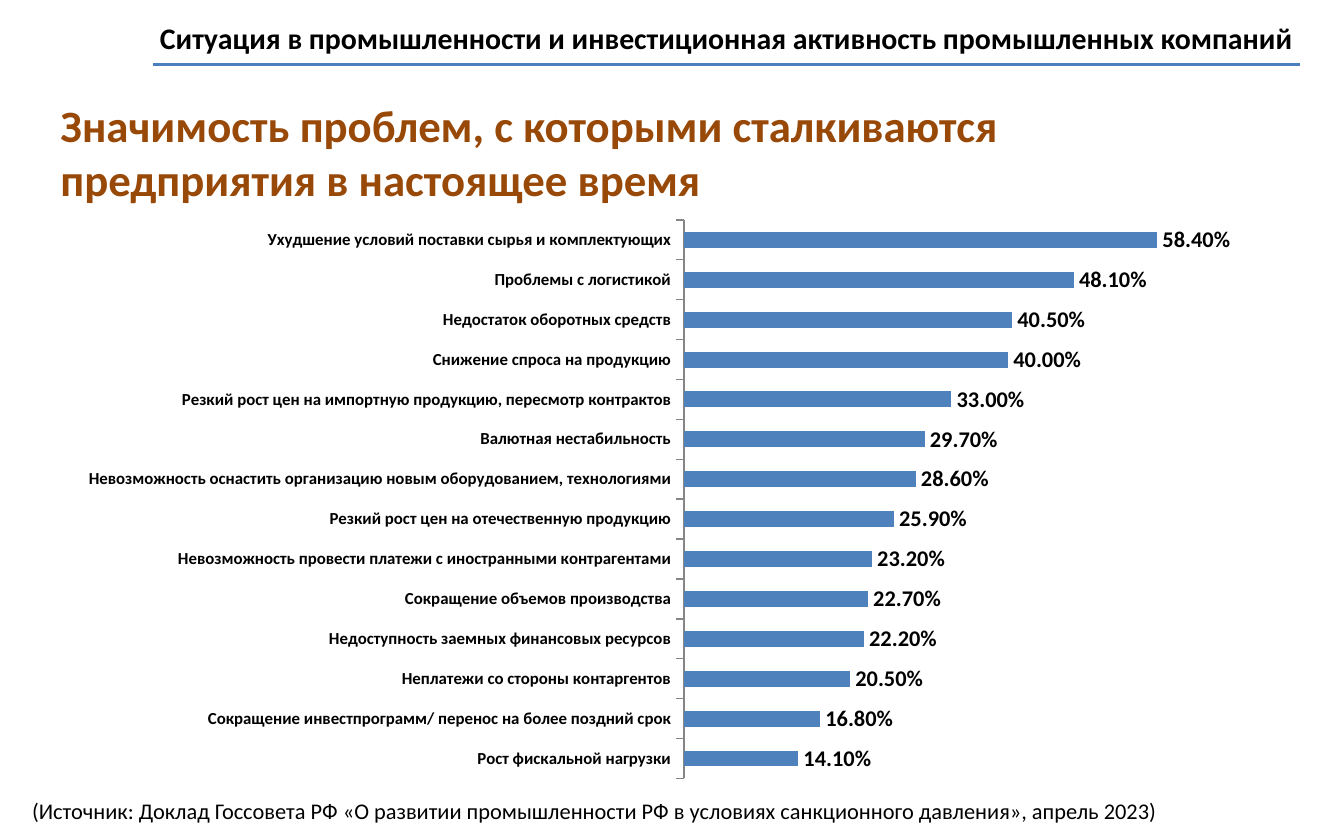
from lxml import etree
from pptx import Presentation
from pptx.chart.data import CategoryChartData
from pptx.dml.color import RGBColor
from pptx.enum.chart import XL_CHART_TYPE, XL_LABEL_POSITION, XL_TICK_MARK
from pptx.enum.shapes import MSO_CONNECTOR
from pptx.enum.text import MSO_ANCHOR, PP_ALIGN
from pptx.oxml.ns import qn
from pptx.util import Inches, Pt

BAR_CLUSTERED = XL_CHART_TYPE.BAR_CLUSTERED
OUTSIDE_END = XL_LABEL_POSITION.OUTSIDE_END
TICK_OUT, TICK_NONE = XL_TICK_MARK.OUTSIDE, XL_TICK_MARK.NONE
STRAIGHT = MSO_CONNECTOR.STRAIGHT
TOP = MSO_ANCHOR.TOP
LEFT, RIGHT = PP_ALIGN.LEFT, PP_ALIGN.RIGHT

FONT = "Calibri"
BLACK = RGBColor(0x00, 0x00, 0x00)
BROWN = RGBColor(0x98, 0x48, 0x07)
RULE_BLUE = RGBColor(0x4B, 0x7E, 0xBC)
BAR_BLUE = RGBColor(0x4F, 0x81, 0xBD)
AXIS_GREY = RGBColor(0x86, 0x86, 0x86)
PERCENT = "0.00%"

PROBLEMS = {
    "Ухудшение условий поставки сырья и комплектующих": 0.584,
    "Проблемы с логистикой": 0.481,
    "Недостаток оборотных средств": 0.405,
    "Снижение спроса на продукцию": 0.4,
    "Резкий рост цен на импортную продукцию, пересмотр контрактов": 0.33,
    "Валютная нестабильность": 0.297,
    "Невозможность оснастить организацию новым оборудованием, технологиями": 0.286,
    "Резкий рост цен на отечественную продукцию": 0.259,
    "Невозможность провести платежи с иностранными контрагентами": 0.232,
    "Сокращение объемов производства": 0.227,
    "Недоступность заемных финансовых ресурсов": 0.222,
    "Неплатежи со стороны контаргентов": 0.205,
    "Сокращение инвестпрограмм/ перенос на более поздний срок": 0.168,
    "Рост фискальной нагрузки": 0.141,
}


def set_font(font, size, bold=False, color=BLACK):
    font.name = FONT
    font.size = Pt(size)
    font.bold = bold
    font.color.rgb = color


def set_text(sp, text, size, bold=False, color=BLACK, align=LEFT):
    tf = sp.text_frame
    tf.word_wrap = True
    tf.vertical_anchor = TOP
    p = tf.paragraphs[0]
    p.text = text
    p.alignment = align
    set_font(p.font, size, bold, color)


def add_title(s, text):
    sp = s.shapes.title
    sp.left, sp.top = Inches(0.35), Inches(0.68)
    sp.width, sp.height = Inches(9.13), Inches(0.9)
    set_text(sp, text, 24, True, BROWN)
    sp.text_frame.margin_right = Inches(0.3)


def add_text(s, left, top, width, height, text, size, **style):
    sp = s.shapes.add_textbox(Inches(left), Inches(top), Inches(width), Inches(height))
    set_text(sp, text, size, **style)


def add_rule(s, left, right, y):
    line = s.shapes.add_connector(STRAIGHT, Inches(left), Inches(y), Inches(right), Inches(y))
    line.line.color.rgb = RULE_BLUE
    line.line.width = Pt(1.25)
    etree.SubElement(line._element.spPr, qn("a:effectLst"))


def set_plot_layout(chart, x, y, w, h):
    plot_area = chart._chartSpace.chart.plotArea
    for old in plot_area.findall(qn("c:layout")):
        plot_area.remove(old)
    layout = etree.Element(qn("c:layout"))
    manual = etree.SubElement(layout, qn("c:manualLayout"))
    settings = {"layoutTarget": "inner", "xMode": "edge", "yMode": "edge",
                "x": x, "y": y, "w": w, "h": h}
    for tag, value in settings.items():
        etree.SubElement(manual, qn(f"c:{tag}")).set("val", str(value))
    plot_area.insert(0, layout)


def add_problem_chart(s):
    data = CategoryChartData(number_format=PERCENT)
    data.categories = list(PROBLEMS)
    data.add_series("Series 1", list(PROBLEMS.values()))
    frame = s.shapes.add_chart(BAR_CLUSTERED, Inches(0.51), Inches(1.55),
                               Inches(8.98), Inches(4.33), data)
    chart = frame.chart
    chart.has_legend = False
    chart.has_title = False
    set_font(chart.font, 10)

    cat = chart.category_axis
    cat.reverse_order = True
    cat.major_tick_mark = TICK_OUT
    cat.minor_tick_mark = TICK_NONE
    cat.format.line.color.rgb = AXIS_GREY
    set_font(cat.tick_labels.font, 9, True)

    val = chart.value_axis
    val.minimum_scale, val.maximum_scale = 0, 0.7
    val.has_major_gridlines = False
    val.visible = False

    plot = chart.plots[0]
    plot.gap_width = 150
    plot.vary_by_categories = False
    fill = plot.series[0].format.fill
    fill.solid()
    fill.fore_color.rgb = BAR_BLUE

    labels = plot.series[0].data_labels
    labels.show_value = True
    labels.number_format = PERCENT
    labels.number_format_is_linked = False
    labels.position = OUTSIDE_END
    set_font(labels.font, 12, True)
    set_plot_layout(chart, 0.51, 0.02, 0.47, 0.96)


def main():
    """Build the slide on the problems industrial companies face."""
    prs = Presentation()
    prs.slide_width, prs.slide_height = Inches(10), Inches(6.25)
    s = prs.slides.add_slide(prs.slide_layouts[5])
    add_title(s, "Значимость проблем, с которыми сталкиваются предприятия в настоящее время")
    add_text(s, 1.06, 0.1, 8.66, 0.64,
             "Ситуация в промышленности и инвестиционная активность промышленных компаний",
             16, bold=True, align=RIGHT)
    add_rule(s, 1.14, 9.67, 0.48)
    add_problem_chart(s)
    add_text(s, 0.14, 5.88, 8.72, 0.3,
             "(Источник: Доклад Госсовета РФ «О развитии промышленности РФ в условиях "
             "санкционного давления», апрель 2023)", 12)
    prs.save("out.pptx")


if __name__ == "__main__":
    main()
